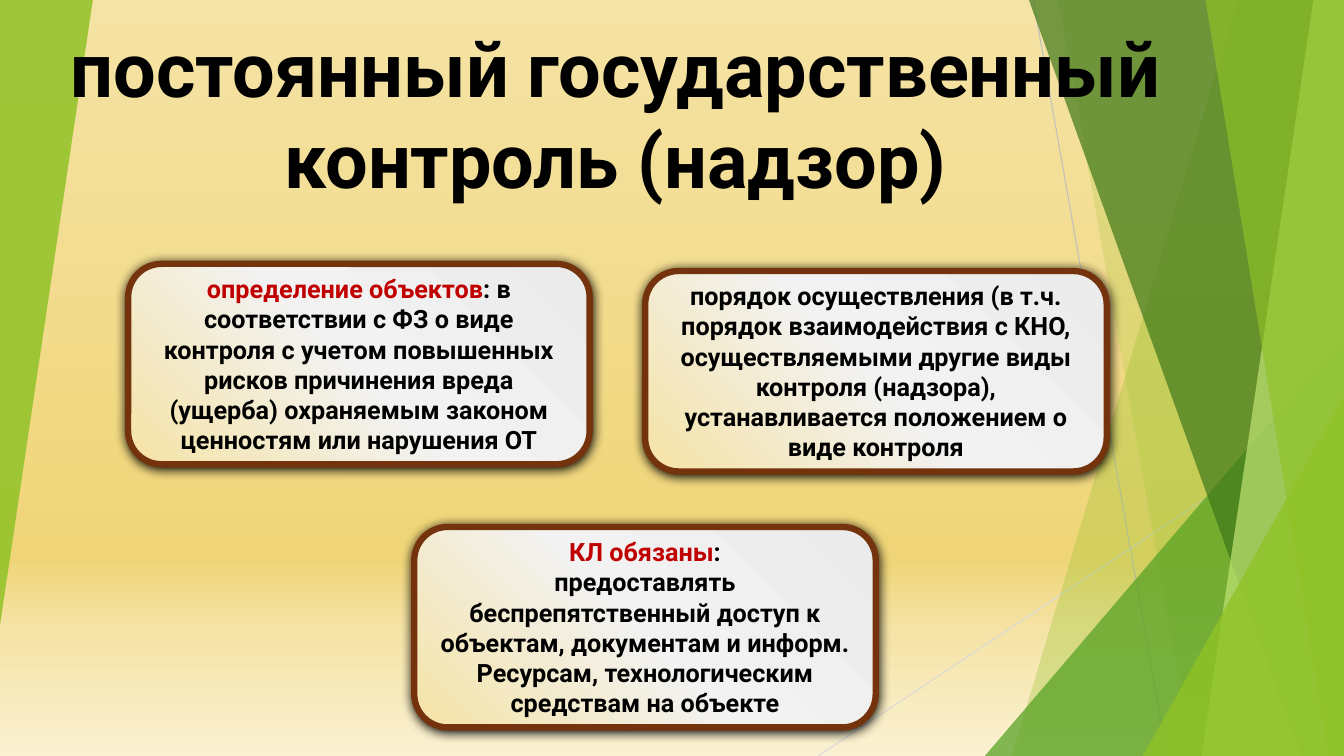
from dataclasses import dataclass
from typing import NamedTuple

from lxml import etree
from pptx import Presentation
from pptx import util as u
from pptx.dml.color import RGBColor
from pptx.enum import shapes, text
from pptx.oxml.ns import qn


@dataclass(frozen=True)
class Theme:
    font: str = "Roboto"
    title_pt: float = 54
    body_pt: float = 18
    edge_pt: float = 4.5
    hairline_pt: float = 0.75
    ink: str = "000000"
    accent: str = "C00000"
    edge: str = "74330C"
    lime: str = "90C226"
    green: str = "54A021"
    forest: str = "3F7819"
    pale: str = "C0E474"
    line_dark: str = "BFBFBF"
    line_light: str = "D9D9D9"
    sky: tuple = ((0, "F5E3A5"), (74, "F0D578"), (83, "F5E3A5"), (100, "FAF1D2"))
    card: tuple = ((0, "EBEBEB"), (50, "F2F2F2"), (100, "F5E3A5"))


class Hairline(NamedTuple):
    x1: float
    y1: float
    x2: float
    y2: float
    color: str


class Band(NamedTuple):
    """Facet reaching from a slanted left side to the right slide edge."""
    top: float
    bottom: float
    color: str
    opacity: int


class Wedge(NamedTuple):
    x: float
    y: float
    w: float
    h: float
    color: str
    opacity: int
    rotation: int = 0


class Run(NamedTuple):
    text: str
    color: str


class Card(NamedTuple):
    x: float
    y: float
    paragraphs: list[list[Run]]


T = Theme()
W, H = 33.87, 19.05
CARD_W, CARD_H = 11.63, 5.05

HAIRLINES = [
    Hairline(26.04, 0, 29.41, H, T.line_dark),
    Hairline(W, 10.24, 20.62, H, T.line_light),
]
# Facets from back to front
FACETS = [
    Band(31.19, 25.5, T.lime, 30),
    Band(26.67, 30.05, T.lime, 20),
    Wedge(24.82, 8.46, W - 24.82, H - 8.46, T.green, 72),
    Band(25.93, 32.79, T.forest, 70),
    Band(33.1, 30.28, T.pale, 70),
    Band(30.38, 33.48, T.lime, 65),
    Wedge(28.8, 9.98, W - 28.8, H - 9.98, T.lime, 80),
    Wedge(0, 0, 2.34, 15.75, T.lime, 85, 180),
]
TITLE = [[Run("постоянный государственный контроль (надзор)", T.ink)]]
CARDS = [
    Card(3.23, 6.65, [[
        Run("определение объектов", T.accent),
        Run(": в соответствии с ФЗ о виде контроля с учетом повышенных рисков "
            "причинения вреда (ущерба) охраняемым законом ценностям или нарушения ОТ", T.ink),
    ]]),
    Card(10.44, 13.28, [
        [Run("КЛ обязаны", T.accent), Run(":", T.ink)],
        [Run("предоставлять беспрепятственный доступ к объектам, документам и информ. "
             "Ресурсам, технологическим средствам на объекте", T.ink)],
    ]),
    Card(16.26, 6.83, [[
        Run("порядок осуществления (в т.ч. порядок взаимодействия с КНО, осуществляемыми "
            "другие виды контроля (надзора), устанавливается положением о виде контроля", T.ink),
    ]]),
]


def rgb(color: str) -> RGBColor:
    return RGBColor.from_string(color)


def sub(parent, tag: str, **attrs):
    return etree.SubElement(parent, qn(tag), {k: str(v) for k, v in attrs.items()})


def set_gradient(fill, props, stops: tuple, angle: int) -> None:
    """Swap a solid fill for a linear gradient, clockwise angle."""
    fill.solid()
    solid = props.find(qn("a:solidFill"))
    grad = etree.Element(qn("a:gradFill"), rotWithShape="1")
    stop_list = sub(grad, "a:gsLst")
    for pos, color in stops:
        sub(sub(stop_list, "a:gs", pos=pos * 1000), "a:srgbClr", val=color)
    sub(grad, "a:lin", ang=angle * 60000, scaled=0)
    props.replace(solid, grad)


def add_hairline(s, line: Hairline) -> None:
    ends = [u.Cm(v) for v in line[:4]]
    c = s.shapes.add_connector(shapes.MSO_CONNECTOR.STRAIGHT, *ends)
    c.line.color.rgb = rgb(line.color)
    c.line.width = u.Pt(T.hairline_pt)
    sub(c.element.spPr, "a:effectLst")


def add_facet(s, facet: Band | Wedge) -> None:
    if isinstance(facet, Band):
        fb = s.shapes.build_freeform(u.Cm(facet.top), 0)
        corners = [(W, 0), (W, H), (facet.bottom, H)]
        fb.add_line_segments([(u.Cm(x), u.Cm(y)) for x, y in corners], close=True)
        sp = fb.convert_to_shape()
    else:
        box = [u.Cm(v) for v in facet[:4]]
        sp = s.shapes.add_shape(shapes.MSO_SHAPE.ISOSCELES_TRIANGLE, *box)
        sp.adjustments[0] = 1
        sp.rotation = facet.rotation
    sp.shadow.inherit = False
    sp.fill.solid()
    sp.fill.fore_color.rgb = rgb(facet.color)
    color = sp.element.spPr.find(qn("a:solidFill")).find(qn("a:srgbClr"))
    sub(color, "a:alpha", val=facet.opacity * 1000)
    sp.line.fill.background()


def write(tf, paragraphs: list[list[Run]], size: float, anchor) -> None:
    tf.word_wrap = True
    tf.vertical_anchor = anchor
    for i, runs in enumerate(paragraphs):
        p = tf.paragraphs[0] if i == 0 else tf.add_paragraph()
        p.alignment = text.PP_ALIGN.CENTER
        for run in runs:
            r = p.add_run()
            r.text = run.text
            r.font.name = T.font
            r.font.size = u.Pt(size)
            r.font.bold = True
            r.font.color.rgb = rgb(run.color)


def add_card(s, card: Card) -> None:
    box = [u.Cm(v) for v in (card.x, card.y, CARD_W, CARD_H)]
    sp = s.shapes.add_shape(shapes.MSO_SHAPE.ROUNDED_RECTANGLE, *box)
    set_gradient(sp.fill, sp.element.spPr, T.card, 135)
    sp.line.color.rgb = rgb(T.edge)
    sp.line.width = u.Pt(T.edge_pt)
    # Soft shadow straight below
    sp.shadow.inherit = False
    effects = sp.element.spPr.find(qn("a:effectLst"))
    shadow = sub(effects, "a:outerShdw", blurRad=u.Pt(8.5), dist=u.Pt(1),
                 dir=90 * 60000, rotWithShape=0)
    sub(shadow, "a:srgbClr", val=T.ink)
    write(sp.text_frame, card.paragraphs, T.body_pt, text.MSO_ANCHOR.MIDDLE)


def main() -> None:
    prs = Presentation()
    prs.slide_width, prs.slide_height = u.Cm(W), u.Cm(H)
    s = prs.slides.add_slide(prs.slide_layouts[6])

    # Background
    fill = s.background.fill
    fill.solid()
    set_gradient(fill, s.element.find(".//" + qn("p:bgPr")), T.sky, 90)

    # Decoration
    for line in HAIRLINES:
        add_hairline(s, line)
    for facet in FACETS:
        add_facet(s, facet)

    # Title
    title = s.shapes.add_textbox(u.Cm(0.79), u.Cm(0.46), u.Cm(29.46), u.Cm(4.8))
    write(title.text_frame, TITLE, T.title_pt, text.MSO_ANCHOR.BOTTOM)

    # Cards
    for card in CARDS:
        add_card(s, card)

    prs.save("out.pptx")


if __name__ == "__main__":
    main()
